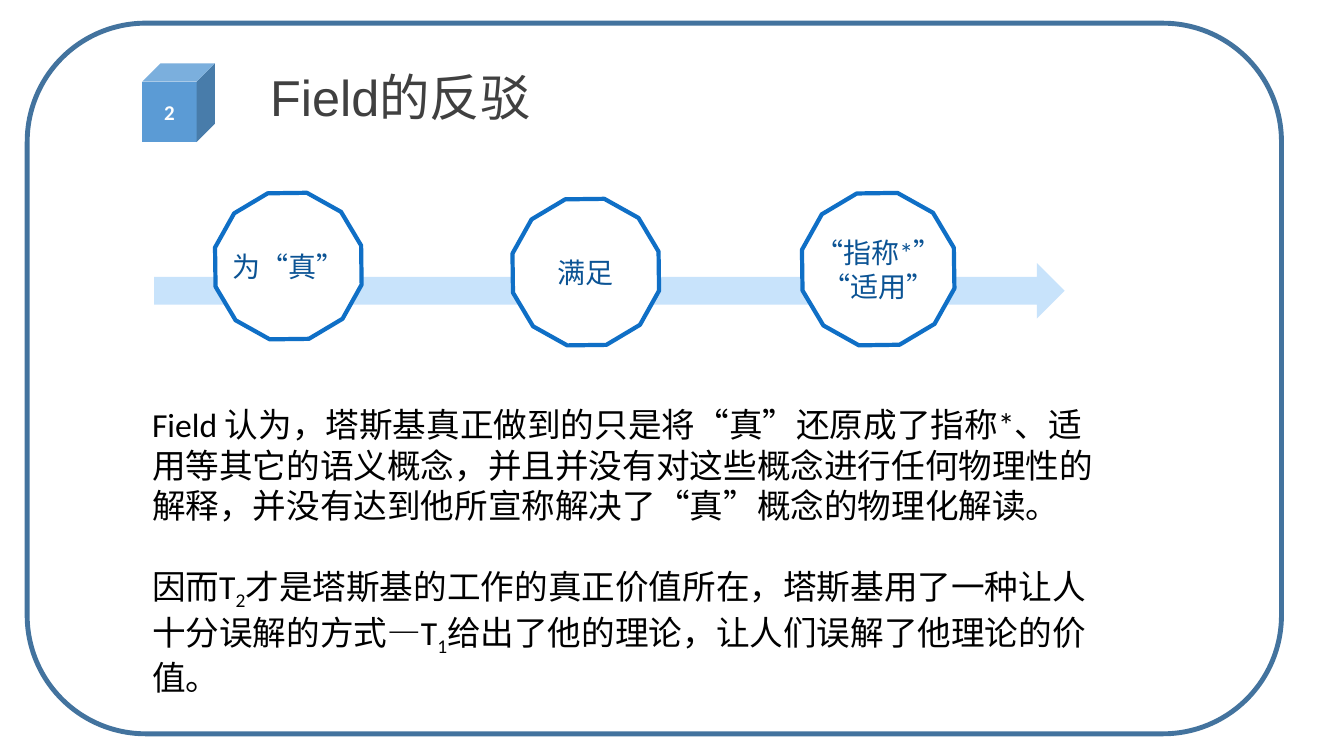
import math

from pptx import Presentation
from pptx import util as u
from pptx.dml.color import RGBColor
from pptx.enum import shapes, text

FRAME_BLUE = RGBColor(0x43, 0x73, 0x9E)
CUBE_BLUE = RGBColor(0x5B, 0x9B, 0xD5)
ARROW_BLUE = RGBColor(0xC8, 0xE3, 0xFB)
OUTLINE_BLUE = RGBColor(0x0F, 0x6F, 0xC6)
LABEL_BLUE = RGBColor(0x0B, 0x53, 0x94)
TITLE_GRAY = RGBColor(0x40, 0x40, 0x40)
WHITE = RGBColor(0xFF, 0xFF, 0xFF)
BLACK = RGBColor(0x00, 0x00, 0x00)

EMU_PER_PX = 9144
SIDES = 12
TILT = math.radians(14.2)


def px(length):
    return u.Emu(round(length * EMU_PER_PX))


class SlideBuilder:
    title_font = "Arial"
    body_font = "Calibri"

    def __init__(self, presentation):
        self.slide = presentation.slides.add_slide(presentation.slide_layouts[5])

    def style(self, paragraph, size, color, name=None, bold=False, align=text.PP_ALIGN.LEFT):
        paragraph.alignment = align
        font = paragraph.font
        font.name = name or self.body_font
        font.size = u.Pt(size)
        font.bold = bold
        font.color.rgb = color

    def paint(self, shape, fill=None, line=None, width=0):
        shape.shadow.inherit = False
        if fill is None:
            shape.fill.background()
        else:
            shape.fill.solid()
            shape.fill.fore_color.rgb = fill
        if line is None:
            shape.line.fill.background()
        else:
            shape.line.color.rgb = line
            shape.line.width = u.Pt(width)

    def label(self, shape, lines, size, color, bold=False):
        frame = shape.text_frame
        frame.vertical_anchor = text.MSO_ANCHOR.MIDDLE
        frame.text = "\n".join(lines)
        for paragraph in frame.paragraphs:
            self.style(paragraph, size, color, bold=bold, align=text.PP_ALIGN.CENTER)

    def title(self, box, wording):
        shape = self.slide.shapes.title
        shape.left, shape.top, shape.width, shape.height = map(px, box)
        frame = shape.text_frame
        frame.text = wording
        frame.auto_size = text.MSO_AUTO_SIZE.NONE
        frame.vertical_anchor = text.MSO_ANCHOR.MIDDLE
        paragraph = frame.paragraphs[0]
        paragraph.line_spacing = 0.9
        self.style(paragraph, 36, TITLE_GRAY, self.title_font)

    def preset(self, kind, box, **paint):
        shape = self.slide.shapes.add_shape(kind, *map(px, box))
        self.paint(shape, **paint)
        return shape

    def dodecagon(self, center_x, center_y, radius, lines):
        angles = [TILT + 2 * math.pi * side / SIDES for side in range(SIDES)]
        corners = [
            (px(center_x + radius * math.sin(angle)), px(center_y - radius * math.cos(angle)))
            for angle in angles
        ]
        builder = self.slide.shapes.build_freeform(*corners[0])
        builder.add_line_segments(corners[1:], close=True)
        shape = builder.convert_to_shape()
        self.paint(shape, fill=WHITE, line=OUTLINE_BLUE, width=3)
        frame = shape.text_frame
        frame.margin_left = frame.margin_right = frame.margin_top = frame.margin_bottom = 0
        self.label(shape, lines, 20, LABEL_BLUE)

    def body(self, box, paragraphs, gap):
        frame = self.slide.shapes.add_textbox(*map(px, box)).text_frame
        frame.word_wrap = True
        for index, pieces in enumerate(paragraphs):
            paragraph = frame.add_paragraph() if index else frame.paragraphs[0]
            if index:
                paragraph.space_before = u.Pt(gap)
            self.style(paragraph, 24, BLACK)
            for position, piece in enumerate(pieces):
                run = paragraph.add_run()
                run.text = piece
                if position % 2:
                    run.font._element.set("baseline", "-25000")


def main():
    presentation = Presentation()
    presentation.slide_width = px(1333)
    presentation.slide_height = px(750)
    builder = SlideBuilder(presentation)
    preset = shapes.MSO_SHAPE

    builder.preset(preset.ROUNDED_RECTANGLE, (27, 23, 1244, 705), line=FRAME_BLUE, width=3.5)
    builder.title((258, 63, 870, 73), "Field的反驳")
    cube = builder.preset(preset.CUBE, (141, 63, 72, 78), fill=CUBE_BLUE)
    builder.label(cube, ["2"], 15, WHITE, bold=True)

    builder.preset(preset.RIGHT_ARROW, (153, 261, 903, 55), fill=ARROW_BLUE)
    for stage in (
        (286, 264, 75, ["为“真”"]),
        (581, 270, 75, ["满足"]),
        (871, 267, 78, ["“指称*”", "“适用”"]),
    ):
        builder.dodecagon(*stage)

    builder.body(
        (141, 396, 973, 293),
        [
            [
                "Field 认为，塔斯基真正做到的只是将“真”还原成了指称*、适用等其它的语义概念，"
                "并且并没有对这些概念进行任何物理性的解释，并没有达到他所宣称解决了“真”概念的物理化解读。"
            ],
            [
                "因而T",
                "2",
                "才是塔斯基的工作的真正价值所在，塔斯基用了一种让人十分误解的方式—T",
                "1",
                "给出了他的理论，让人们误解了他理论的价值。",
            ],
        ],
        gap=29,
    )
    presentation.save("out.pptx")


if __name__ == "__main__":
    main()
